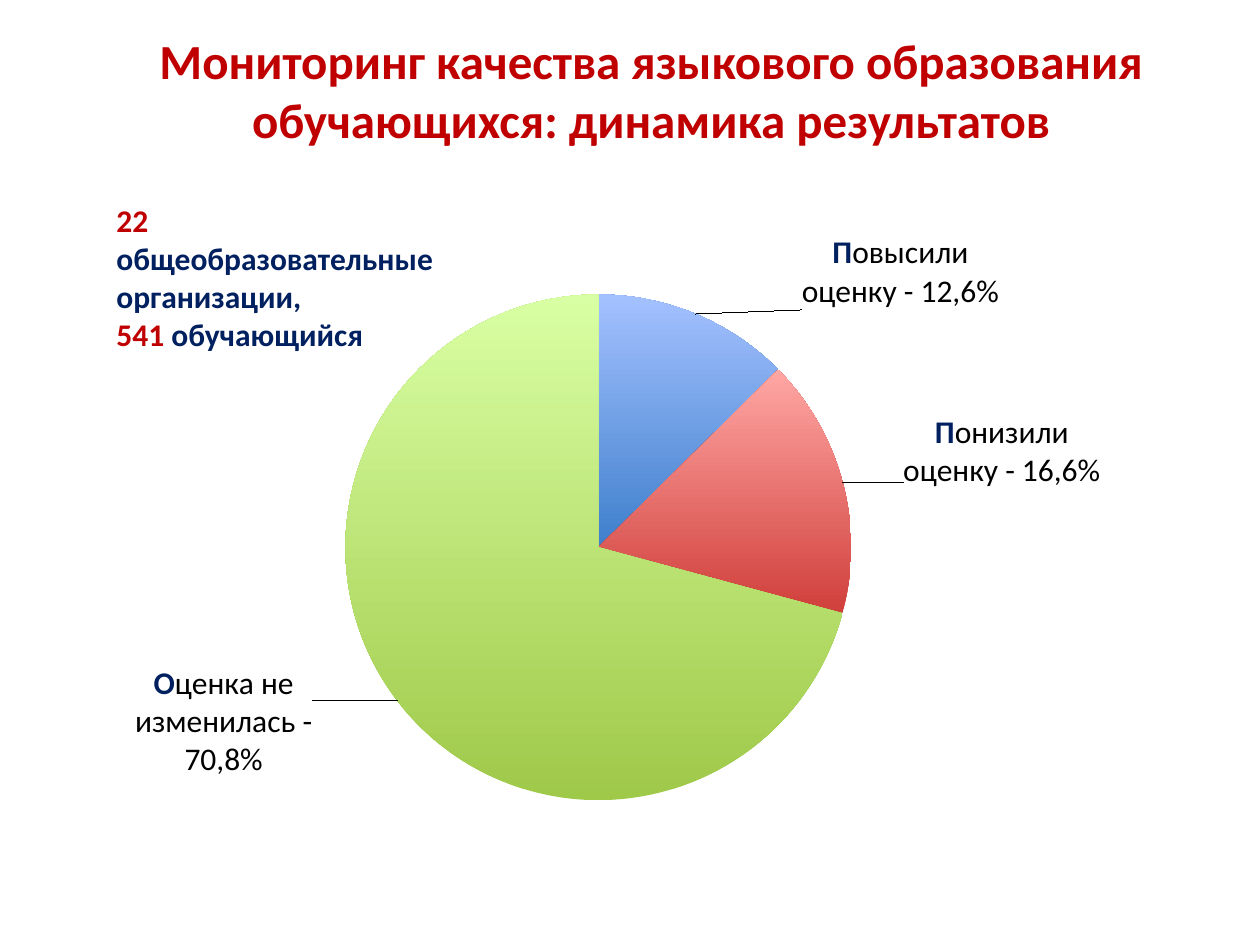
"""Build a slide with a pie chart of changes in language assessment marks."""
from dataclasses import dataclass

from lxml import etree
from pptx import Presentation
from pptx.chart.data import CategoryChartData
from pptx.dml.color import RGBColor
from pptx.enum.chart import XL_CHART_TYPE, XL_LABEL_POSITION
from pptx.enum.text import MSO_ANCHOR, PP_ALIGN
from pptx.oxml.ns import qn
from pptx.util import Pt

PIE = XL_CHART_TYPE.PIE
OUTSIDE = XL_LABEL_POSITION.OUTSIDE_END
LEFT, CENTER = PP_ALIGN.LEFT, PP_ALIGN.CENTER
TOP, MIDDLE = MSO_ANCHOR.TOP, MSO_ANCHOR.MIDDLE
EMU_PER_PX = 914400 / 126
FONT = "Calibri"
GRADIENT_STYLE = 26
SHARE_FORMAT = "0.0%"
COLORS = {"red": "C00000", "navy": "002060", "black": "000000"}


@dataclass(frozen=True)
class Area:
    left: int
    top: int
    width: int
    height: int

    def emu(self) -> list[int]:
        return [px(n) for n in (self.left, self.top, self.width, self.height)]


@dataclass(frozen=True)
class Span:
    text: str
    color: str
    bold: bool = True


@dataclass(frozen=True)
class Slice:
    category: str
    share: float
    percent: str
    shift_x: int
    shift_y: int


TITLE_AREA = Area(84, 26, 1134, 127)
CHART_AREA = Area(54, 204, 1134, 674)
PIE_AREA = Area(345, 294, 506, 506)
SAMPLE_AREA = Area(104, 195, 348, 169)
TITLE = "Мониторинг качества языкового образования обучающихся: динамика результатов"
SAMPLE = [
    [Span("22", "red"), Span(" общеобразовательные организации,", "navy")],
    [Span("541", "red"), Span(" обучающийся", "navy")],
]
SLICES = [
    Slice("Повысили оценку", 0.126, "12,6%", 103, 3),
    Slice("Понизили оценку", 0.166, "16,6%", 53, 9),
    Slice("Оценка не изменилась", 0.708, "70,8%", -79, -41),
]


def px(length: int) -> int:
    return round(length * EMU_PER_PX)


def color(name: str) -> RGBColor:
    return RGBColor.from_string(COLORS[name])


def add_spans(para, spans: list[Span], size: int) -> None:
    for span in spans:
        run = para.add_run()
        run.text = span.text
        run.font.name, run.font.size, run.font.bold = FONT, Pt(size), span.bold
        run.font.color.rgb = color(span.color)


def add_text(page, area: Area, lines: list[list[Span]], *, size: int,
             align=LEFT, anchor=TOP) -> None:
    frame = page.shapes.add_textbox(*area.emu()).text_frame
    frame.word_wrap, frame.vertical_anchor = True, anchor
    for index, spans in enumerate(lines):
        para = frame.add_paragraph() if index else frame.paragraphs[0]
        para.alignment = align
        add_spans(para, spans, size)


def manual_layout(**values: str | float):
    layout = etree.Element(qn("c:layout"))
    manual = etree.SubElement(layout, qn("c:manualLayout"))
    for tag, value in values.items():
        etree.SubElement(manual, qn(f"c:{tag}")).set("val", str(value))
    return layout


def place_pie(chart) -> None:
    plot_area = chart.element.xpath(".//c:plotArea")[0]
    for old in plot_area.findall(qn("c:layout")):
        plot_area.remove(old)
    plot_area.insert(0, manual_layout(
        layoutTarget="inner", xMode="edge", yMode="edge",
        x=round((PIE_AREA.left - CHART_AREA.left) / CHART_AREA.width, 3),
        y=round((PIE_AREA.top - CHART_AREA.top) / CHART_AREA.height, 3),
        w=round(PIE_AREA.width / CHART_AREA.width, 3),
        h=round(PIE_AREA.height / CHART_AREA.height, 3)))


def label_slices(chart) -> None:
    series = chart.plots[0].series[0]
    labels = series.data_labels
    labels.show_value = labels.show_category_name = True
    labels.number_format, labels.number_format_is_linked = SHARE_FORMAT, False
    labels.position = OUTSIDE
    for index, part in enumerate(SLICES):
        label = series.points[index].data_label
        text = f"{part.category} - {part.percent}"
        add_spans(label.text_frame.paragraphs[0],
                  [Span(text[0], "navy"), Span(text[1:], "black", bold=False)], 18)
        label.position = OUTSIDE
    for label, part in zip(chart.element.xpath(".//c:dLbl"), SLICES):
        label.find(qn("c:showCatName")).set("val", "1")
        label.insert(1, manual_layout(
            x=round(part.shift_x / CHART_AREA.width, 3),
            y=round(part.shift_y / CHART_AREA.height, 3)))


def add_pie(page) -> None:
    data = CategoryChartData(number_format=SHARE_FORMAT)
    data.categories = [part.category for part in SLICES]
    data.add_series("Series 1", [part.share for part in SLICES])
    chart = page.shapes.add_chart(PIE, *CHART_AREA.emu(), data).chart
    chart.chart_style = GRADIENT_STYLE
    chart.has_title = chart.has_legend = False
    chart.font.name, chart.font.size = FONT, Pt(18)
    chart.font.color.rgb = color("black")
    chart.plots[0].vary_by_categories = True
    place_pie(chart)
    label_slices(chart)


def main() -> None:
    deck = Presentation()
    deck.slide_width, deck.slide_height = px(1260), px(945)
    page = deck.slides.add_slide(deck.slide_layouts[6])
    add_text(page, TITLE_AREA, [[Span(TITLE, "red")]], size=28,
             align=CENTER, anchor=MIDDLE)
    add_pie(page)
    add_text(page, SAMPLE_AREA, SAMPLE, size=18)
    deck.save("out.pptx")


if __name__ == "__main__":
    main()
